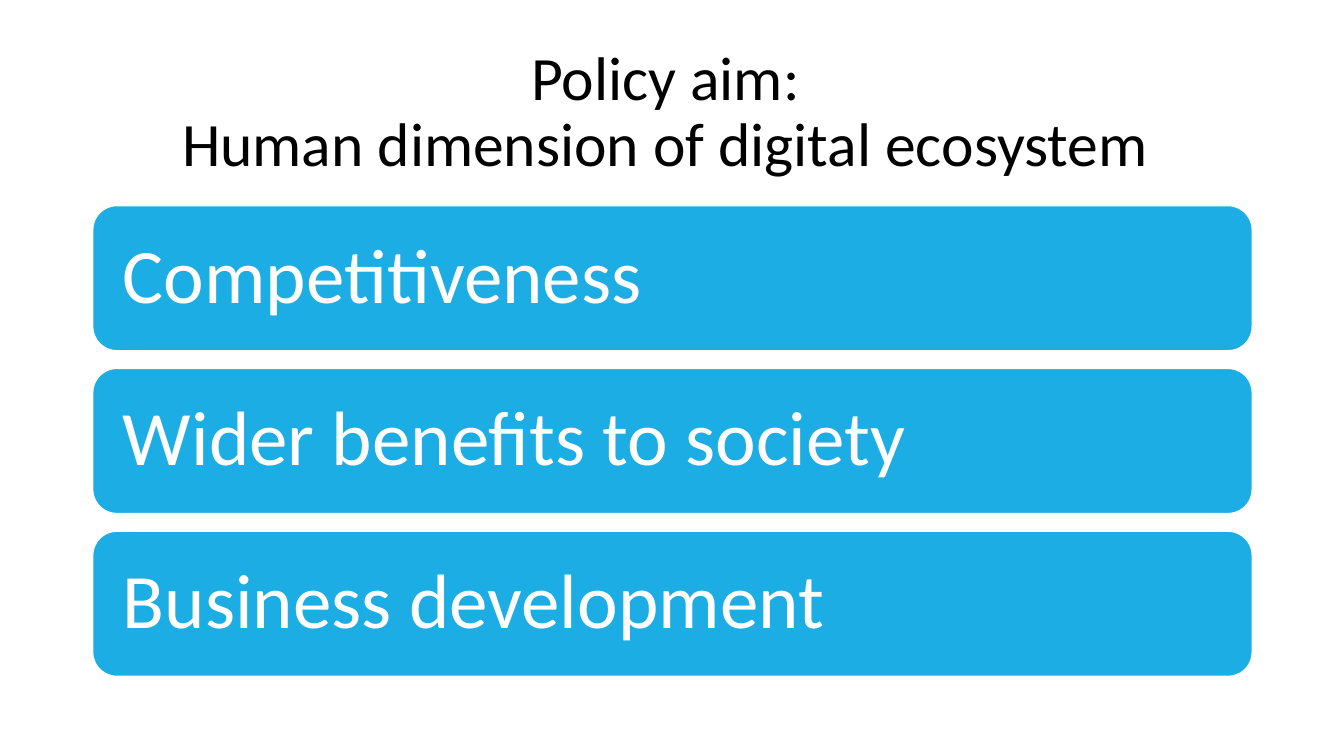
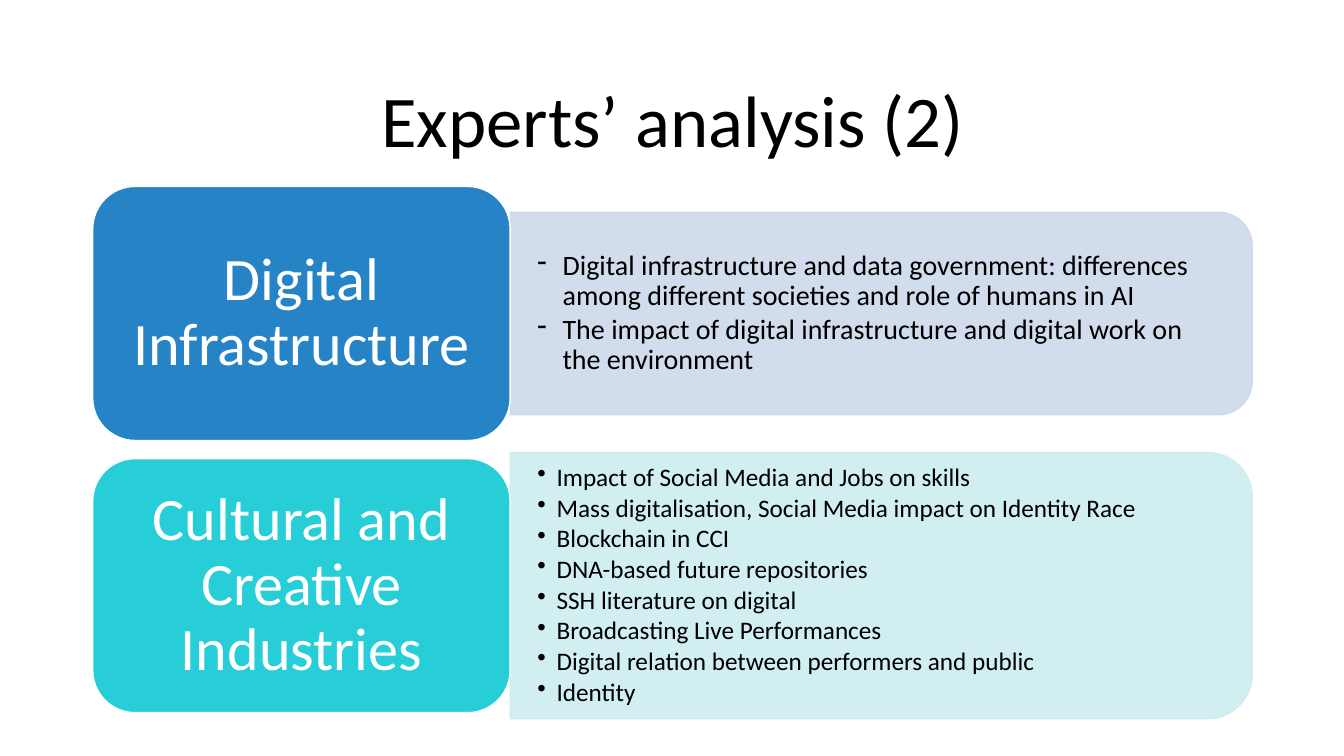
"""Build two slides on the human side of the digital ecosystem."""
from lxml import etree
from pptx import Presentation
from pptx import util as u
from pptx.dml.color import RGBColor
from pptx.enum import shapes, text
from pptx.oxml import ns

WHITE = RGBColor(0xFF, 0xFF, 0xFF)
BLACK = RGBColor(0x00, 0x00, 0x00)
SKY = RGBColor(0x1C, 0xAD, 0xE4)
BLUE = RGBColor(0x26, 0x83, 0xC6)
TURQUOISE = RGBColor(0x27, 0xCE, 0xD7)
PALE_BLUE = RGBColor(0xCD, 0xD9, 0xEA)
PALE_TURQUOISE = RGBColor(0xCD, 0xED, 0xF0)

FONT = "Calibri"
LEFT, WIDTH = 0.92, 11.5
TITLE_BOTTOM = 1.85
BAR_TOP, BAR_HEIGHT, BAR_PITCH = 2.04, 1.44, 1.615
LABEL_TOP, LABEL_HEIGHT, LABEL_PITCH = 1.85, 2.52, 2.7
LABEL_WIDTH = WIDTH * 0.36
PANEL_WIDTH = WIDTH - LABEL_WIDTH
CORNER_INSET = 0.0488

BARS = ["Competitiveness", "Wider benefits to society", "Business development"]
TOPICS = [
    dict(label="Digital Infrastructure", color=BLUE, pale=PALE_BLUE,
         height=2.01, size=20, bullet="-", indent=0.25, items=[
             "Digital infrastructure and data government: differences among "
             "different societies and role of humans in AI",
             "The impact of digital infrastructure and digital work on the "
             "environment"]),
    dict(label="Cultural and Creative Industries", color=TURQUOISE,
         pale=PALE_TURQUOISE, height=2.64, size=18, bullet="•", indent=0.19,
         items=[
             "Impact of Social Media and Jobs on skills",
             "Mass digitalisation, Social Media impact on Identity Race",
             "Blockchain in CCI",
             "DNA-based future repositories",
             "SSH literature on digital",
             "Broadcasting Live Performances",
             "Digital relation between performers and public",
             "Identity"]),
]


def inches(*values):
    """Turn numbers into lengths in inches."""
    return [u.Inches(v) for v in values]


def style_paragraph(p, size, color, align):
    """Set the font, alignment and line spacing of a paragraph."""
    p.font.name, p.font.size = FONT, u.Pt(size)
    p.font.color.rgb = color
    p.alignment, p.line_spacing = align, 0.9


def set_frame(tf, across, down):
    """Wrap and centre a text frame vertically, with the given margins."""
    tf.word_wrap, tf.auto_size = True, text.MSO_AUTO_SIZE.NONE
    tf.vertical_anchor = text.MSO_ANCHOR.MIDDLE
    tf.margin_left = tf.margin_right = u.Inches(across)
    tf.margin_top = tf.margin_bottom = u.Inches(down)


def add_slide(prs, title, size, height):
    """Add a title-only slide whose title ends at the shared height."""
    s = prs.slides.add_slide(prs.slide_layouts[5])
    sp = s.shapes.title
    sp.left, sp.top, sp.width, sp.height = inches(
        LEFT, TITLE_BOTTOM - height, WIDTH, height)
    set_frame(sp.text_frame, 0.1, 0.05)
    sp.text_frame.text = title
    style_paragraph(sp.text_frame.paragraphs[0], size, BLACK,
                    text.PP_ALIGN.CENTER)
    return s


def add_filled(s, kind, box, fill, line):
    """Add a filled shape with a thin outline and no shadow."""
    sp = s.shapes.add_shape(kind, *inches(*box))
    sp.shadow.inherit = False
    sp.fill.solid()
    sp.fill.fore_color.rgb = fill
    sp.line.color.rgb, sp.line.width = line, u.Pt(1)
    return sp


def add_rounded(s, box, words, size, fill, align, margins):
    """Add a rounded rectangle with white text."""
    sp = add_filled(s, shapes.MSO_SHAPE.ROUNDED_RECTANGLE, box, fill, WHITE)
    set_frame(sp.text_frame, *margins)
    sp.text_frame.text = words
    style_paragraph(sp.text_frame.paragraphs[0], size, WHITE, align)


def add_panel(s, left, top, width, height, color):
    """Add a translucent panel rounded on its right side."""
    box = (left + (width - height) / 2, top + (height - width) / 2,
           height, width)
    sp = add_filled(s, shapes.MSO_SHAPE.ROUND_2_SAME_RECTANGLE, box,
                    color, color)
    sp.rotation = 90
    for clr in sp.element.spPr.iter(ns.qn("a:srgbClr")):
        etree.SubElement(clr, ns.qn("a:alpha"), val="90000")


def add_bullets(s, box, items, size, bullet, indent):
    """Add a text box with a bulleted list."""
    tf = s.shapes.add_textbox(*inches(*box)).text_frame
    set_frame(tf, 0.27, 0.14)
    tf.text = "\n".join(items)
    for p in tf.paragraphs:
        style_paragraph(p, size, BLACK, text.PP_ALIGN.LEFT)
        p.space_after = u.Pt(2.5)
        pPr = p._p.get_or_add_pPr()
        pPr.set("marL", str(u.Inches(indent)))
        pPr.set("indent", str(-u.Inches(indent)))
        mark = etree.Element(ns.qn("a:buChar"), char=bullet)
        pPr.find(ns.qn("a:defRPr")).addprevious(mark)


def add_topic(s, row, topic):
    """Add one row: a panel with its list and the label beside it."""
    top = LABEL_TOP + row * LABEL_PITCH
    height = topic["height"]
    left = LEFT + LABEL_WIDTH
    panel_top = top + (LABEL_HEIGHT - height) / 2
    inset = height * CORNER_INSET
    add_panel(s, left, panel_top, PANEL_WIDTH, height, topic["pale"])
    add_bullets(s, (left, panel_top + inset, PANEL_WIDTH - inset,
                    height - 2 * inset),
                topic["items"], topic["size"], topic["bullet"],
                topic["indent"])
    add_rounded(s, (LEFT, top, LABEL_WIDTH, LABEL_HEIGHT), topic["label"], 43,
                topic["color"], text.PP_ALIGN.CENTER, (0.18, 0.09))


def main():
    """Build and save the presentation."""
    prs = Presentation()
    prs.slide_width, prs.slide_height = inches(13.33, 7.5)

    s = add_slide(prs, "Policy aim: \vHuman dimension of digital ecosystem ",
                  44, 1.45)
    for row, words in enumerate(BARS):
        box = (LEFT, BAR_TOP + row * BAR_PITCH, WIDTH, BAR_HEIGHT)
        add_rounded(s, box, words, 55, SKY, text.PP_ALIGN.LEFT, (0.23, 0.23))

    s = add_slide(prs, "Experts’ analysis (2)", 52, 1.24)
    for row, topic in enumerate(TOPICS):
        add_topic(s, row, topic)

    prs.save("out.pptx")


if __name__ == "__main__":
    main()
